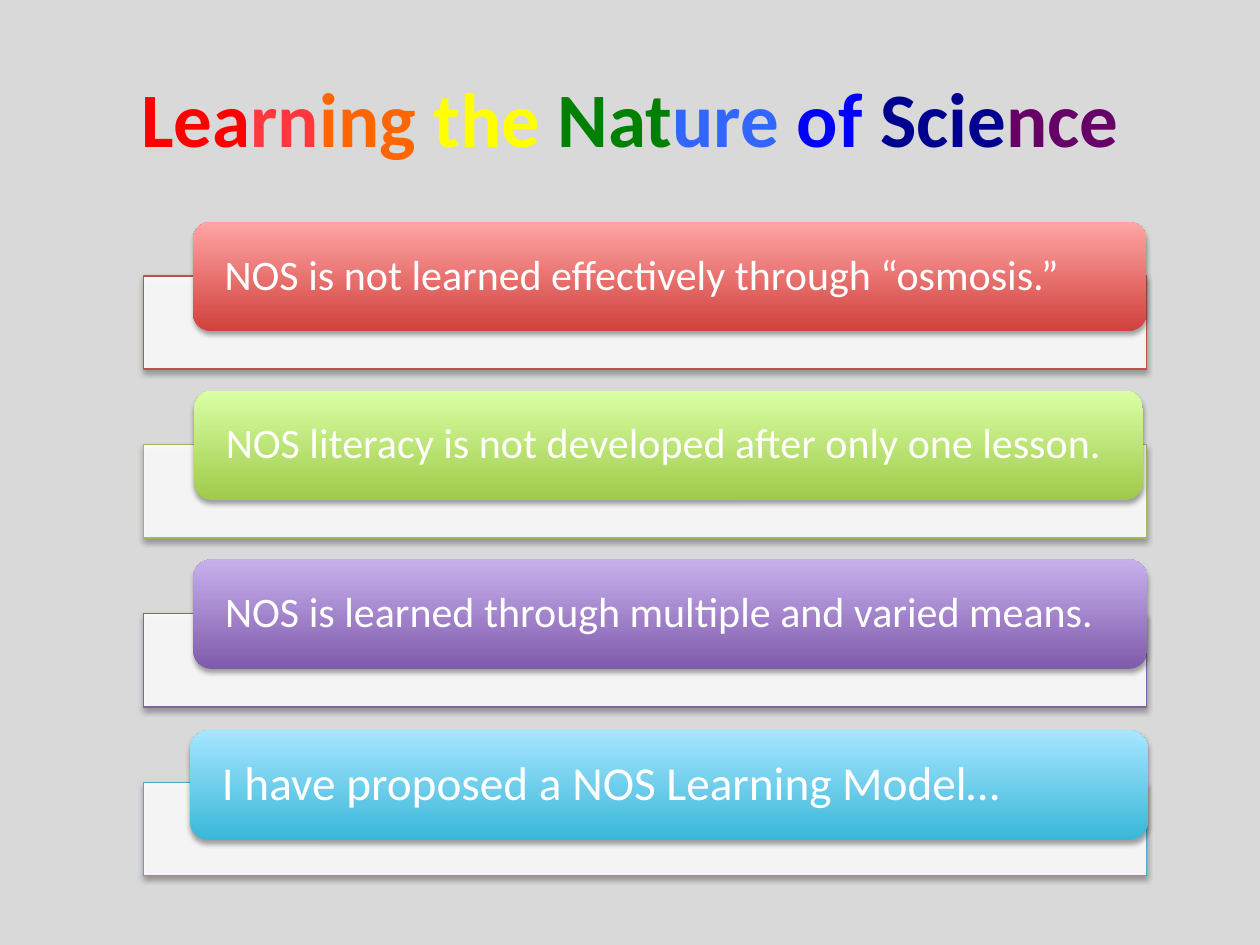
"""Build the "Learning the Nature of Science" slide: a rainbow title over four bars."""
from lxml import etree
from pptx import Presentation
from pptx.dml.color import RGBColor
from pptx.enum.shapes import MSO_SHAPE
from pptx.enum.text import MSO_ANCHOR, PP_ALIGN
from pptx.oxml.ns import qn
from pptx.util import Pt

RECT, ROUND = MSO_SHAPE.RECTANGLE, MSO_SHAPE.ROUNDED_RECTANGLE
MIDDLE = MSO_ANCHOR.MIDDLE
LEFT, CENTER = PP_ALIGN.LEFT, PP_ALIGN.CENTER
FONT = "Calibri"
WHITE = RGBColor(0xFF, 0xFF, 0xFF)
GRAY = RGBColor(0xD9, 0xD9, 0xD9)

TITLE = [
    ("Lea", RGBColor(0xFF, 0x00, 0x00)),
    ("rn", RGBColor(0xFF, 0x38, 0x3E)),
    ("ing ", RGBColor(0xFF, 0x66, 0x00)),
    ("the ", RGBColor(0xFF, 0xFF, 0x00)),
    ("Nat", RGBColor(0x00, 0x80, 0x00)),
    ("ure ", RGBColor(0x33, 0x66, 0xFF)),
    ("of ", RGBColor(0x00, 0x00, 0xFF)),
    ("Scie", RGBColor(0x00, 0x00, 0x90)),
    ("nce", RGBColor(0x66, 0x00, 0x66)),
]

RED = [RGBColor(0xC0, 0x50, 0x4D), RGBColor(0xD1, 0x40, 0x3C), RGBColor(0xFF, 0xA6, 0xA5)]
GREEN = [RGBColor(0x9B, 0xBB, 0x59), RGBColor(0xA0, 0xCA, 0x4A), RGBColor(0xDA, 0xFF, 0xA5)]
PURPLE = [RGBColor(0x80, 0x64, 0xA2), RGBColor(0x7F, 0x5B, 0xAB), RGBColor(0xC8, 0xB0, 0xED)]
BLUE = [RGBColor(0x4B, 0xAC, 0xC6), RGBColor(0x39, 0xB7, 0xD8), RGBColor(0xA7, 0xE6, 0xFF)]

# text, size, (line, dark, light), bar left, bar width, bar drop
POINTS = [
    ("NOS is not learned effectively through “osmosis.”", 24, RED, 110.2, 545, 0),
    ("NOS literacy is not developed after only one lesson.", 24, GREEN, 110.9, 542.2, 0),
    ("NOS is learned through multiple and varied means.", 24, PURPLE, 110.5, 545, 0),
    ("I have proposed a NOS Learning Model…", 27, BLUE, 108.7, 547.2, 1.2),
]
PANEL_X, PANEL_Y, PANEL_W, PANEL_H = 82.1, 157.7, 573.1, 53.3
PITCH, BAR_RISE, BAR_H, INSET = 96.5, 31, 62.6, 15.1


def add_run(p, text, size, color, bold=False):
    r = p.add_run()
    r.text = text
    f = r.font
    f.name, f.size, f.bold = FONT, Pt(size), bold
    f.color.rgb = color


def add_block(s, kind, x, y, w, h):
    sp = s.shapes.add_shape(kind, Pt(x), Pt(y), Pt(w), Pt(h))
    sp.shadow.inherit = False
    effects = sp.element.spPr.find(qn("a:effectLst"))
    shadow = etree.SubElement(
        effects, qn("a:outerShdw"), blurRad=str(Pt(3.1)), dist=str(Pt(1.8)),
        dir="5400000", rotWithShape="0")
    color = etree.SubElement(shadow, qn("a:srgbClr"), val="000000")
    etree.SubElement(color, qn("a:alpha"), val="35000")
    return sp


def add_panel(s, y, color):
    sp = add_block(s, RECT, PANEL_X, y, PANEL_W, PANEL_H)
    sp.fill.solid()
    sp.fill.fore_color.rgb = WHITE
    fill = sp.element.spPr.find(qn("a:solidFill"))
    etree.SubElement(fill[0], qn("a:alpha"), val="90000")
    sp.line.color.rgb = color
    sp.line.width = Pt(0.75)


def add_bar(s, x, y, w, text, size, colors):
    sp = add_block(s, ROUND, x, y, w, BAR_H)
    sp.fill.gradient()
    sp.fill.gradient_angle = 90
    for stop, color in zip(sp.fill.gradient_stops, colors):
        stop.color.rgb = color
    sp.line.fill.background()
    tf = sp.text_frame
    tf.word_wrap = True
    tf.vertical_anchor = MIDDLE
    tf.margin_left = tf.margin_right = Pt(INSET)
    tf.margin_top = tf.margin_bottom = Pt(0)
    p = tf.paragraphs[0]
    p.alignment = LEFT
    p.line_spacing = 0.9
    add_run(p, text, size, WHITE)


def main():
    prs = Presentation()
    prs.slide_width, prs.slide_height = Pt(720), Pt(540)
    s = prs.slides.add_slide(prs.slide_layouts[5])
    s.background.fill.solid()
    s.background.fill.fore_color.rgb = GRAY

    title = s.shapes.title
    title.left, title.top, title.width, title.height = Pt(36), Pt(21.6), Pt(648), Pt(90)
    tf = title.text_frame
    tf.vertical_anchor = MIDDLE
    p = tf.paragraphs[0]
    p.alignment = CENTER
    for text, color in TITLE:
        add_run(p, text, 44, color, bold=True)

    for i, (text, size, (line, *shades), x, w, drop) in enumerate(POINTS):
        y = PANEL_Y + i * PITCH
        add_panel(s, y, line)
        add_bar(s, x, y - BAR_RISE + drop, w, text, size, shades)

    prs.save("out.pptx")


if __name__ == "__main__":
    main()
